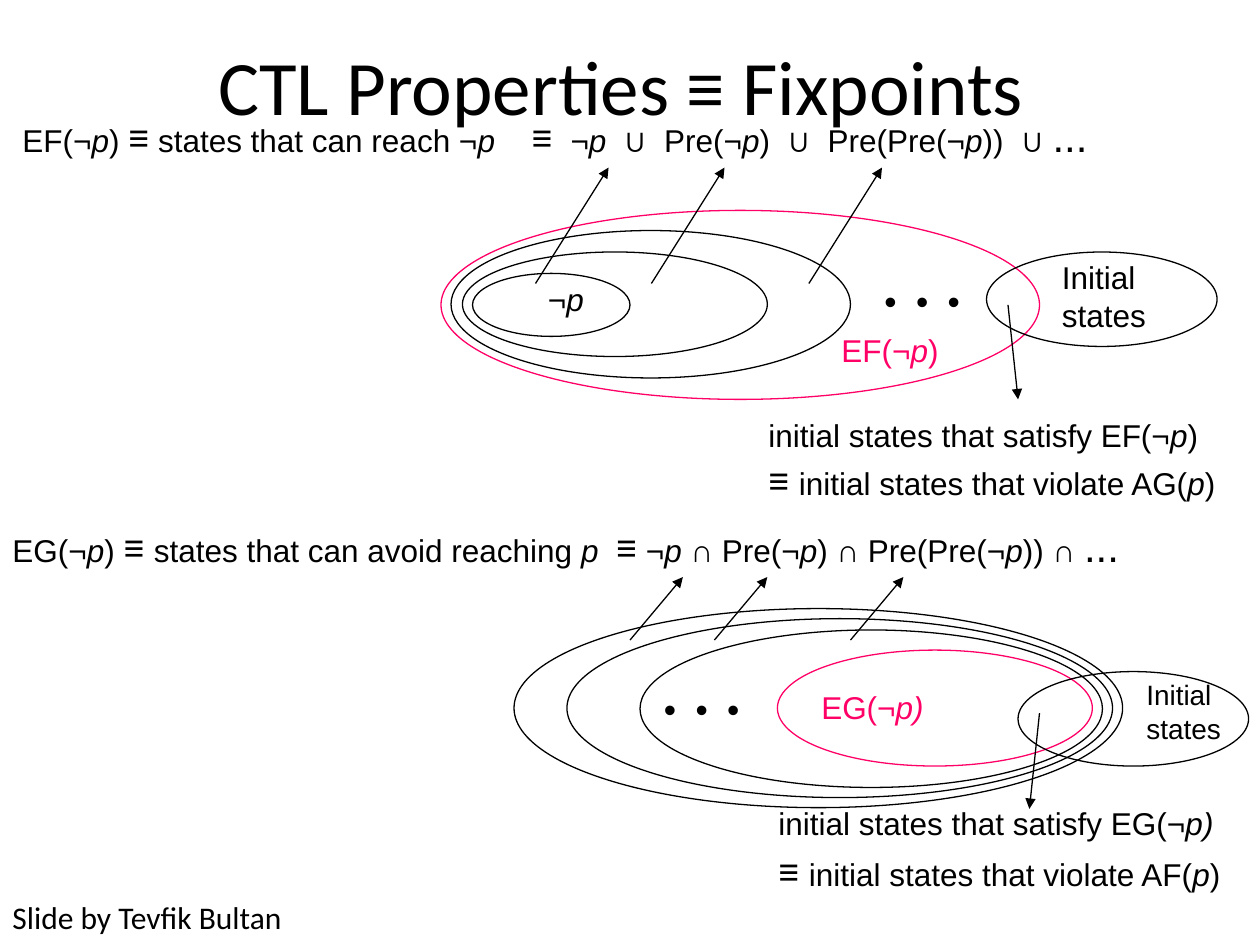
from dataclasses import dataclass

from lxml import etree
from pptx import Presentation
from pptx.dml import color
from pptx.enum import shapes, text
from pptx.oxml import ns
from pptx.util import Inches, Pt


@dataclass(frozen=True)
class Theme:
    ink: color.RGBColor = color.RGBColor(0, 0, 0)
    accent: color.RGBColor = color.RGBColor(0xFF, 0x00, 0x66)
    sans: str = "Arial"
    symbol: str = "Calibri"
    title: int = 44
    large: int = 24
    dots: int = 20
    body: int = 18
    small: int = 16
    line: float = 0.75


THEME = Theme()


@dataclass(frozen=True)
class Run:
    content: str
    size: int = THEME.body
    font: str = THEME.sans
    italic: bool = False


@dataclass(frozen=True)
class Ellipse:
    left: float
    top: float
    width: float
    height: float
    ink: color.RGBColor = THEME.ink


@dataclass(frozen=True)
class Arrow:
    start_x: float
    start_y: float
    end_x: float
    end_y: float


@dataclass(frozen=True)
class Label:
    left: float
    top: float
    width: float
    height: float
    paragraphs: tuple
    ink: color.RGBColor = THEME.ink
    wrap: bool = True
    tabs: tuple = ()


def variable(content: str) -> Run:
    return Run(content, italic=True)


def symbol(content: str) -> Run:
    return Run(content, THEME.large, THEME.symbol)


def add_runs(paragraph, runs: tuple, ink: color.RGBColor) -> None:
    for item in runs:
        run = paragraph.add_run()
        run.text = item.content
        run.font.size = Pt(item.size)
        run.font.name = item.font
        run.font.italic = item.italic
        run.font.color.rgb = ink


def add_tabs(paragraph, positions: tuple) -> None:
    properties = paragraph._p.get_or_add_pPr()
    tab_list = etree.SubElement(properties, ns.qn("a:tabLst"))
    for position in positions:
        etree.SubElement(tab_list, ns.qn("a:tab"), pos=str(int(Inches(position))), algn="l")


def add_label(slide, label: Label) -> None:
    shape = slide.shapes.add_textbox(
        Inches(label.left), Inches(label.top), Inches(label.width), Inches(label.height))
    frame = shape.text_frame
    frame.word_wrap = label.wrap
    frame.auto_size = text.MSO_AUTO_SIZE.SHAPE_TO_FIT_TEXT
    for index, runs in enumerate(label.paragraphs):
        paragraph = frame.add_paragraph() if index else frame.paragraphs[0]
        if label.tabs:
            add_tabs(paragraph, label.tabs)
        add_runs(paragraph, runs, label.ink)


def add_ellipse(slide, ellipse: Ellipse) -> None:
    shape = slide.shapes.add_shape(
        shapes.MSO_SHAPE.OVAL, Inches(ellipse.left), Inches(ellipse.top),
        Inches(ellipse.width), Inches(ellipse.height))
    shape.shadow.inherit = False
    shape.fill.background()
    shape.line.color.rgb = ellipse.ink
    shape.line.width = Pt(THEME.line)


def add_arrow(slide, arrow: Arrow) -> None:
    connector = slide.shapes.add_connector(
        shapes.MSO_CONNECTOR.STRAIGHT, Inches(arrow.start_x), Inches(arrow.start_y),
        Inches(arrow.end_x), Inches(arrow.end_y))
    connector.line.color.rgb = THEME.ink
    connector.line.width = Pt(THEME.line)
    properties = connector._element.spPr
    etree.SubElement(properties.find(ns.qn("a:ln")), ns.qn("a:tailEnd"), type="triangle")
    etree.SubElement(properties, ns.qn("a:effectLst"))


def add_title(slide) -> None:
    title = slide.shapes.title
    title.left, title.top = Inches(0.5), Inches(0.05)
    title.width, title.height = Inches(9), Inches(1.25)
    title.text_frame.vertical_anchor = text.MSO_ANCHOR.MIDDLE
    paragraph = title.text_frame.paragraphs[0]
    paragraph.alignment = text.PP_ALIGN.CENTER
    add_runs(paragraph, (Run("CTL Properties ≡ Fixpoints ", THEME.title, THEME.symbol),), THEME.ink)


P = variable("p")
DOTS = ((Run("•  •  •", THEME.dots),),)

ELLIPSES = (
    Ellipse(3.75, 2.17, 1.25, 0.5),
    Ellipse(3.67, 2, 2.42, 0.83),
    Ellipse(3.58, 1.83, 3.17, 1.17),
    Ellipse(3.5, 1.67, 4.75, 1.5, THEME.accent),
    Ellipse(7.83, 2, 1.83, 0.75),
    Ellipse(4.08, 4.83, 4.83, 1.58),
    Ellipse(4.5, 4.91, 4.33, 1.42),
    Ellipse(5.08, 5, 3.67, 1.25),
    Ellipse(6.17, 5.16, 2.5, 0.92, THEME.accent),
    Ellipse(8.08, 5.33, 1.83, 0.75),
)

ARROWS = (
    *(Arrow(x, 2.25, x + 0.58, 1.33) for x in (4.25, 5.17, 6.42)),
    *(Arrow(x, 5.08, x + 0.42, 4.58) for x in (5, 5.67, 6.75)),
    Arrow(8, 2.42, 8.08, 3.17),
    Arrow(8.25, 5.66, 8.17, 6.42),
)

LABELS = (
    Label(0.08, 0.83, 9.01, 0.5, ((
        Run("EF(¬"), P, Run(") "), symbol("≡"), Run(" states that can reach ¬"), P,
        symbol("\t≡\t"), Run("¬"), variable("p  "), Run("∪  Pre(¬"), P,
        Run(")  ∪  Pre(Pre(¬"), P, Run("))  ∪ "), Run("...", THEME.large)),),
        tabs=(4.04, 4.35)),
    Label(6.92, 2.17, 0.98, 0.43, DOTS),
    Label(4.25, 2.17, 0.75, 0.4, ((Run("¬"), P),)),
    Label(6.58, 2.58, 1.01, 0.4, ((Run("EF(¬"), P, Run(")")),), THEME.accent, wrap=False),
    Label(8.33, 2, 0.94, 0.7, ((Run("Initial"),), (Run("states"),))),
    Label(6, 3.25, 4.25, 0.8, (
        (Run("initial states that satisfy EF(¬"), P, Run(")")),
        (symbol("≡ "), Run("initial states that violate AG("), P, Run(")")))),
    Label(0, 4.08, 9.67, 0.5, ((
        Run("EG(¬"), P, Run(") "), symbol("≡ "), Run("states that can avoid reaching "),
        variable("p  "), symbol("≡"), Run(" ¬"), variable("p "), Run("∩ Pre(¬"), P,
        Run(") ∩ Pre(Pre(¬"), P, Run(")) ∩ "), Run("...", THEME.large)),)),
    Label(5.17, 5.41, 0.98, 0.43, DOTS),
    Label(6.42, 5.41, 1.17, 0.4, ((Run("EG(¬"), variable("p)")),), THEME.accent),
    Label(9, 5.33, 0.94, 0.64, ((Run("Initial", THEME.small),), (Run("states", THEME.small),))),
    Label(6.08, 6.25, 4.25, 0.8, (
        (Run("initial states that satisfy EG(¬"), variable("p)"), symbol(" ")),
        (symbol("≡ "), Run("initial states that violate AF("), P, Run(")")))),
    Label(0, 7.08, 2.39, 0.4, ((Run("Slide by Tevfik Bultan", font=THEME.symbol),),), wrap=False),
)


def main() -> None:
    presentation = Presentation()
    presentation.slide_width, presentation.slide_height = Inches(10), Inches(7.5)
    slide = presentation.slides.add_slide(presentation.slide_layouts[5])
    add_title(slide)
    for ellipse in ELLIPSES:
        add_ellipse(slide, ellipse)
    for arrow in ARROWS:
        add_arrow(slide, arrow)
    for label in LABELS:
        add_label(slide, label)
    presentation.save("out.pptx")


if __name__ == "__main__":
    main()
